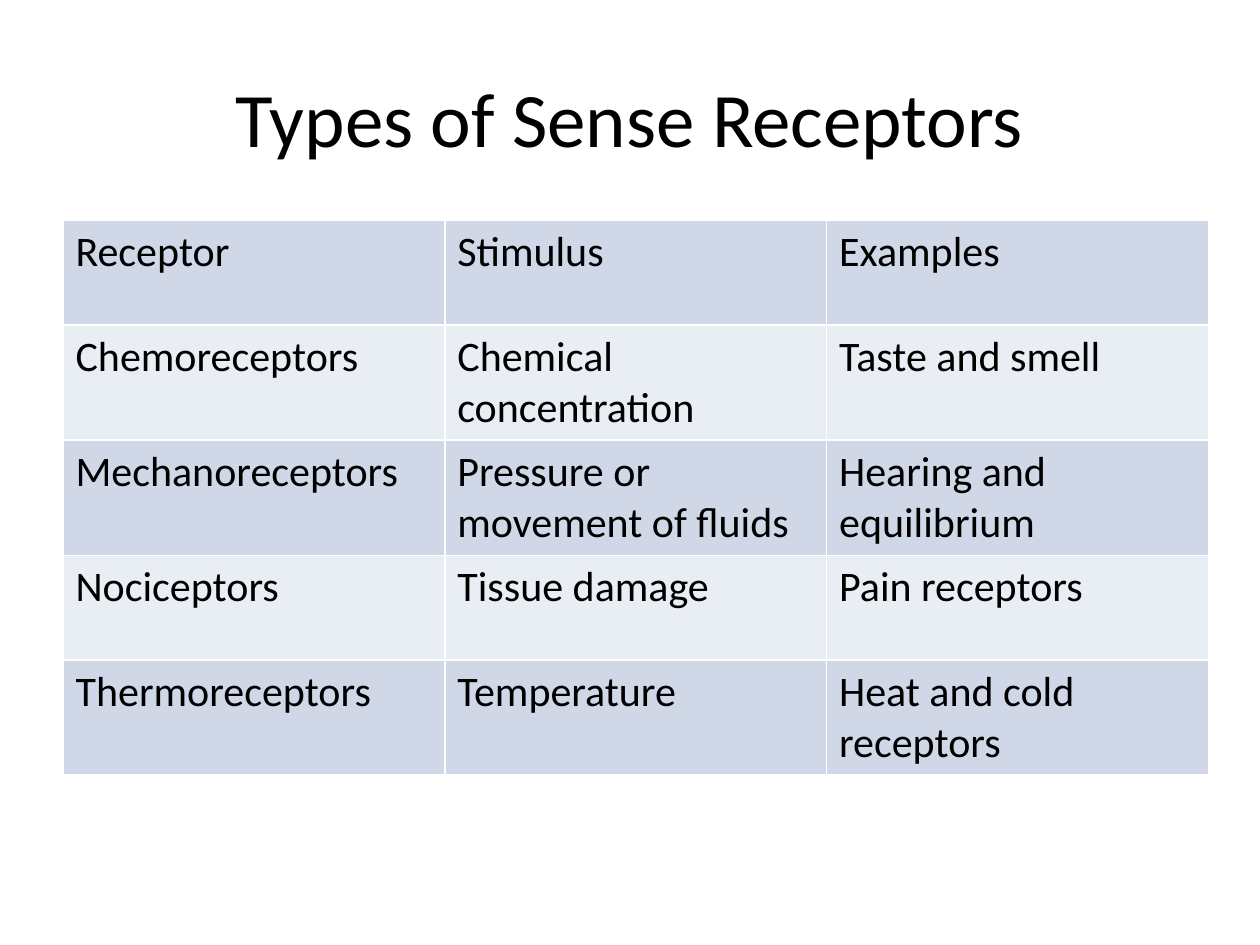
from typing import NamedTuple

from lxml import etree
from pptx import Presentation
from pptx import util as u
from pptx.dml.color import RGBColor
from pptx.enum import text
from pptx.oxml.ns import qn

BLACK = RGBColor(0x00, 0x00, 0x00)
WHITE = RGBColor(0xFF, 0xFF, 0xFF)
DARK_BAND = RGBColor(0xD0, 0xD8, 0xE8)
LIGHT_BAND = RGBColor(0xE9, 0xED, 0xF4)
FONT = "Calibri"

ROW_HEIGHT = u.Inches(0.83)
COLUMN_WIDTH = u.Inches(3.03)


class Receptor(NamedTuple):
    name: str
    stimulus: str
    examples: str


ROWS = [
    Receptor("Receptor", "Stimulus", "Examples"),
    Receptor("Chemoreceptors", "Chemical concentration", "Taste and smell"),
    Receptor("Mechanoreceptors", "Pressure or movement of fluids",
             "Hearing and equilibrium"),
    Receptor("Nociceptors", "Tissue damage", "Pain receptors"),
    Receptor("Thermoreceptors", "Temperature", "Heat and cold receptors"),
]


def write(frame, words: str, *, size: float, color: RGBColor = BLACK,
          align=text.PP_ALIGN.LEFT, anchor=None) -> None:
    """Put one formatted paragraph into a text frame."""
    frame.word_wrap = True
    if anchor is not None:
        frame.vertical_anchor = anchor
    paragraph = frame.paragraphs[0]
    paragraph.alignment = align
    run = paragraph.add_run()
    run.text = words
    run.font.name = FONT
    run.font.size = u.Pt(size)
    run.font.color.rgb = color


def set_borders(cell, color: RGBColor, width: float) -> None:
    """Draw the four sides of a cell; call before its fill is set."""
    properties = cell._tc.get_or_add_tcPr()
    for side in ("lnL", "lnR", "lnT", "lnB"):
        line = etree.SubElement(properties, qn(f"a:{side}"), w=str(u.Pt(width)))
        fill = etree.SubElement(line, qn("a:solidFill"))
        etree.SubElement(fill, qn("a:srgbClr"), val=str(color))


def add_title(slide, words: str) -> None:
    title = slide.shapes.title
    title.left, title.top = u.Inches(0.5), u.Inches(0.3)
    title.width, title.height = u.Inches(9), u.Inches(1.25)
    write(title.text_frame, words, size=44, align=text.PP_ALIGN.CENTER,
          anchor=text.MSO_ANCHOR.MIDDLE)


def add_receptor_table(slide, rows: list[Receptor]) -> None:
    column_count = len(Receptor._fields)
    table = slide.shapes.add_table(
        len(rows), column_count, u.Inches(0.5), u.Inches(1.75),
        COLUMN_WIDTH * column_count, ROW_HEIGHT * len(rows)).table
    table.first_row = False
    for row_index, receptor in enumerate(rows):
        for column_index, words in enumerate(receptor):
            cell = table.cell(row_index, column_index)
            set_borders(cell, WHITE, 1)
            cell.fill.solid()
            cell.fill.fore_color.rgb = LIGHT_BAND if row_index % 2 else DARK_BAND
            write(cell.text_frame, words, size=24)


def main() -> None:
    presentation = Presentation()
    presentation.slide_width = u.Inches(10)
    presentation.slide_height = u.Inches(7.5)

    # Title-only layout
    slide = presentation.slides.add_slide(presentation.slide_layouts[5])
    slide.background.fill.solid()
    slide.background.fill.fore_color.rgb = WHITE

    # Title and table
    add_title(slide, "Types of Sense Receptors")
    add_receptor_table(slide, ROWS)

    presentation.save("out.pptx")


if __name__ == "__main__":
    main()
